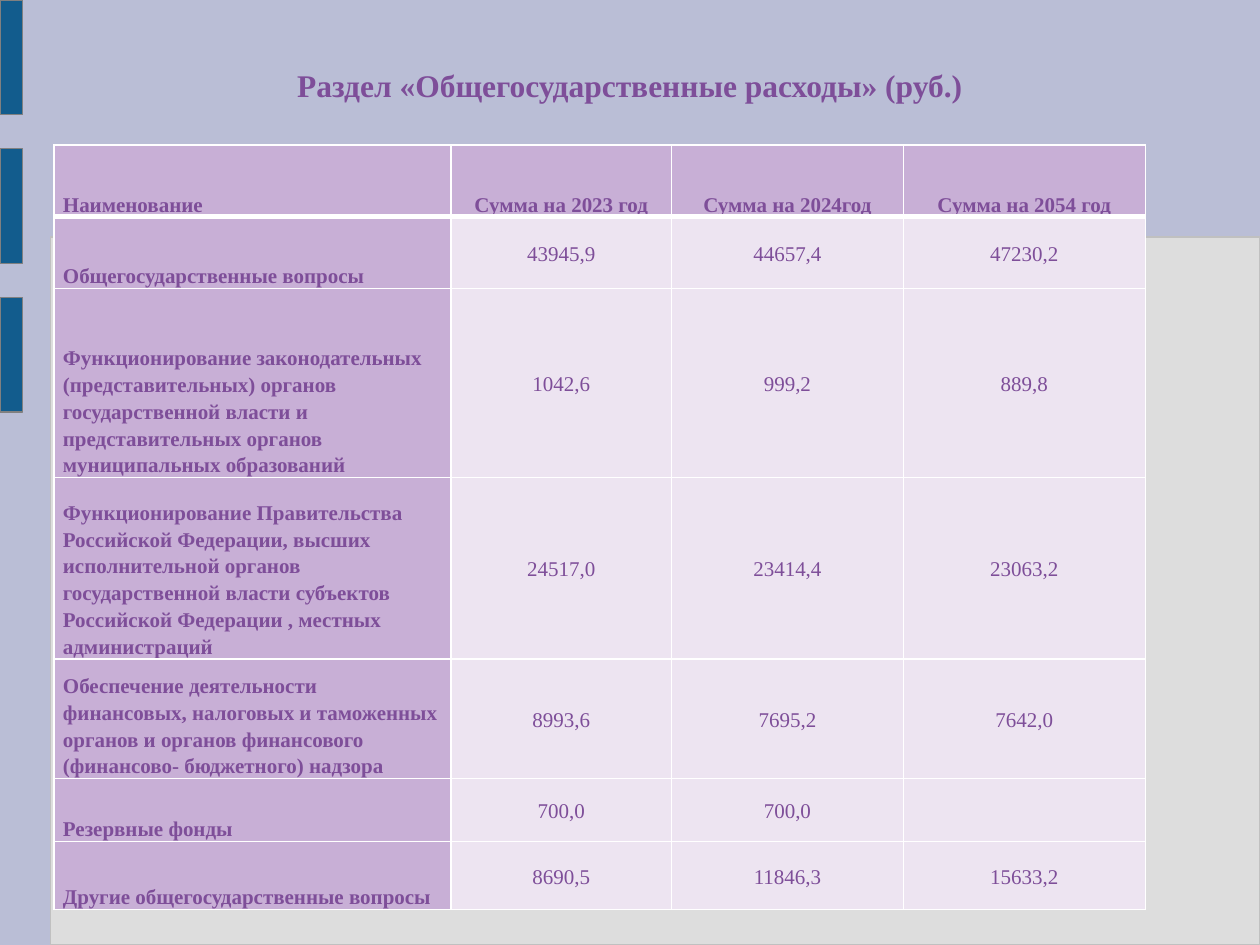
from lxml import etree
from pptx import Presentation
from pptx import util as u
from pptx.dml.color import RGBColor
from pptx.enum import shapes, text
from pptx.oxml import ns

BACKGROUND = RGBColor(0xBA, 0xBE, 0xD6)
PANEL = RGBColor(0xDD, 0xDD, 0xDD)
PANEL_LINE = RGBColor(0xC0, 0xC0, 0xC0)
TAB = RGBColor(0x12, 0x5C, 0x8D)
TAB_LINE = RGBColor(0x80, 0x80, 0x80)
PURPLE = RGBColor(0x7E, 0x4E, 0x99)
HEADING_FILL = RGBColor(0xC8, 0xAF, 0xD6)
VALUE_FILL = RGBColor(0xED, 0xE4, 0xF1)
WHITE = RGBColor(0xFF, 0xFF, 0xFF)

COLUMN_WIDTHS = [3.15, 1.75, 1.84, 1.92]
ROW_HEIGHTS = [0.57, 0.57, 1.5, 1.44, 0.95, 0.5, 0.54]
ROWS = [
    ["Наименование", "Сумма на 2023 год", "Сумма на 2024год", "Сумма на 2054 год"],
    ["Общегосударственные вопросы", "43945,9", "44657,4", "47230,2"],
    ["Функционирование законодательных (представительных) органов "
     "государственной власти и представительных органов "
     "муниципальных образований", "1042,6", "999,2", "889,8"],
    ["Функционирование Правительства Российской Федерации, высших "
     "исполнительной органов государственной власти субъектов "
     "Российской Федерации , местных администраций",
     "24517,0", "23414,4", "23063,2"],
    ["Обеспечение деятельности финансовых, налоговых и таможенных органов "
     "и органов финансового (финансово- бюджетного) надзора",
     "8993,6", "7695,2", "7642,0"],
    ["Резервные фонды", "700,0", "700,0", ""],
    ["Другие общегосударственные вопросы", "8690,5", "11846,3", "15633,2"],
]


def format_paragraph(paragraph, size, bold, alignment, spacing):
    paragraph.alignment = alignment
    paragraph.line_spacing = spacing
    paragraph.font.name = "Times New Roman"
    paragraph.font.size = u.Pt(size)
    paragraph.font.bold = bold
    paragraph.font.color.rgb = PURPLE


def add_borders(cell, widths):
    properties = cell._tc.get_or_add_tcPr()
    for position, (side, width) in enumerate(widths.items()):
        line = etree.Element(ns.qn(f"a:ln{side}"), w=str(u.Pt(width)))
        fill = etree.SubElement(line, ns.qn("a:solidFill"))
        etree.SubElement(fill, ns.qn("a:srgbClr"), val=str(WHITE))
        properties.insert(position, line)


presentation = Presentation()
presentation.slide_width = u.Inches(10)
presentation.slide_height = u.Inches(7.5)
slide = presentation.slides.add_slide(presentation.slide_layouts[5])
slide.background.fill.solid()
slide.background.fill.fore_color.rgb = BACKGROUND

decorations = [(0.4, 1.88, 9.6, 5.62, PANEL, PANEL_LINE)]
decorations += [(0, 1.18 * step, 0.18, 0.91, TAB, TAB_LINE) for step in range(3)]
for left, top, width, height, fill_color, line_color in decorations:
    shape = slide.shapes.add_shape(
        shapes.MSO_SHAPE.ROUNDED_RECTANGLE,
        u.Inches(left), u.Inches(top), u.Inches(width), u.Inches(height))
    shape.adjustments[0] = 0
    shape.shadow.inherit = False
    shape.fill.solid()
    shape.fill.fore_color.rgb = fill_color
    shape.line.color.rgb = line_color
    shape.line.width = u.Pt(0.75)

table = slide.shapes.add_table(
    len(ROWS), len(COLUMN_WIDTHS), u.Inches(0.43), u.Inches(1.15),
    u.Inches(sum(COLUMN_WIDTHS)), u.Inches(sum(ROW_HEIGHTS))).table
table.first_col = True
table.horz_banding = False
for column, width in zip(table.columns, COLUMN_WIDTHS):
    column.width = u.Inches(width)
for row, height in zip(table.rows, ROW_HEIGHTS):
    row.height = u.Inches(height)

for row_index, values in enumerate(ROWS):
    for column_index, value in enumerate(values):
        heading = row_index == 0 or column_index == 0
        cell = table.cell(row_index, column_index)
        cell.text = value
        cell.margin_left = cell.margin_right = u.Inches(0.07)
        cell.margin_top = cell.margin_bottom = 0
        cell.vertical_anchor = text.MSO_ANCHOR.BOTTOM if heading else text.MSO_ANCHOR.MIDDLE
        cell.fill.solid()
        cell.fill.fore_color.rgb = HEADING_FILL if heading else VALUE_FILL
        alignment = text.PP_ALIGN.CENTER if column_index else text.PP_ALIGN.LEFT
        format_paragraph(cell.text_frame.paragraphs[0], 12, heading, alignment, 1.15)
        add_borders(cell, {"L": 1, "R": 1, "T": 3 if row_index == 1 else 1,
                           "B": 3 if row_index == 0 else 1})

title = slide.shapes.title
title.left, title.top = u.Inches(0.73), u.Inches(0.55)
title.width, title.height = u.Inches(8.54), u.Inches(0.6)
frame = title.text_frame
frame.text = "Раздел «Общегосударственные расходы» (руб.)"
frame.margin_left = frame.margin_right = frame.margin_top = frame.margin_bottom = 0
frame.vertical_anchor = text.MSO_ANCHOR.TOP
frame.word_wrap = True
format_paragraph(frame.paragraphs[0], 18, True, text.PP_ALIGN.CENTER, 0.93)

presentation.save("out.pptx")
